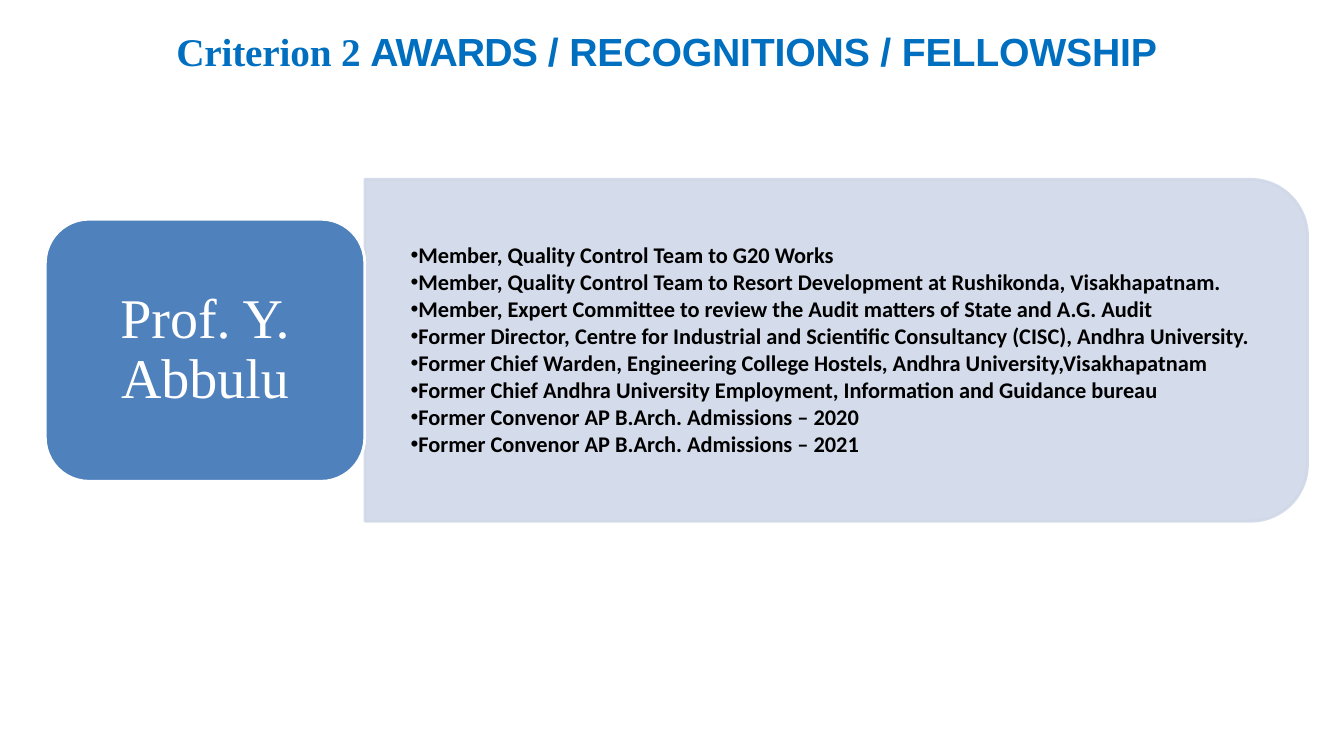
from lxml import etree
from pptx import Presentation
from pptx.dml.color import RGBColor
from pptx.enum.shapes import MSO_SHAPE
from pptx.enum.text import MSO_ANCHOR, PP_ALIGN
from pptx.oxml.ns import qn
from pptx.util import Pt

ROUNDED = MSO_SHAPE.ROUNDED_RECTANGLE
ROUNDED_TOP = MSO_SHAPE.ROUND_2_SAME_RECTANGLE
MIDDLE = MSO_ANCHOR.MIDDLE
CENTER = PP_ALIGN.CENTER

TITLE_PARTS = [
    ("Criterion 2 ", "Times New Roman", -10),
    ("AWARDS ", "Arial", -60),
    ("/ RECOGNITIONS / FELLOWSHIP", "Arial", -10),
]
HONOURS = [
    "Member, Quality Control Team to G20 Works",
    "Member, Quality Control Team to Resort Development at Rushikonda, Visakhapatnam.",
    "Member, Expert Committee to review the Audit matters of State and A.G. Audit",
    "Former Director, Centre for Industrial and Scientific Consultancy (CISC), Andhra University.",
    "Former Chief Warden, Engineering College Hostels, Andhra University,Visakhapatnam",
    "Former Chief Andhra University Employment, Information and Guidance bureau",
    "Former Convenor AP B.Arch. Admissions – 2020",
    "Former Convenor AP B.Arch. Admissions – 2021",
]


def color(value):
    return RGBColor.from_string(value)


class AwardsSlide:
    blue = "006FC0"
    panel = "D0D8E8"
    card = "4F81BD"
    white = "FFFFFF"
    black = "000000"

    def __init__(self, slide):
        self.slide = slide

    def box(self, left, top, width, height):
        return self.slide.shapes.add_textbox(Pt(left), Pt(top), Pt(width), Pt(height))

    def shape(self, kind, left, top, width, height, fill, line):
        shape = self.slide.shapes.add_shape(kind, Pt(left), Pt(top), Pt(width), Pt(height))
        shape.shadow.inherit = False
        shape.fill.solid()
        shape.fill.fore_color.rgb = color(fill)
        shape.line.color.rgb = color(line)
        shape.line.width = Pt(2)
        return shape

    def frame(self, shape, across, down):
        frame = shape.text_frame
        frame.word_wrap = True
        frame.margin_left = frame.margin_right = Pt(across)
        frame.margin_top = frame.margin_bottom = Pt(down)
        return frame

    def style(self, run, font, size, ink, bold=False):
        run.font.name = font
        run.font.size = Pt(size)
        run.font.bold = bold
        run.font.color.rgb = color(ink)

    def title(self, parts, *place):
        frame = self.frame(self.box(*place), 0, 1)
        for text, font, spacing in parts:
            run = frame.paragraphs[0].add_run()
            run.text = text
            self.style(run, font, 28, self.blue, True)
            run.font._element.set("spc", str(spacing))

    def backdrop(self, *place):
        backdrop = self.shape(ROUNDED_TOP, *place, self.panel, self.panel)
        backdrop.rotation = 90
        for tint in backdrop._element.spPr.iter(qn("a:srgbClr")):
            etree.SubElement(tint, qn("a:alpha"), val="90000")

    def honours(self, items, *place):
        frame = self.frame(self.box(*place), 19.2, 9.6)
        frame.vertical_anchor = MIDDLE
        frame.text = "\n".join(items)
        for paragraph in frame.paragraphs:
            properties = paragraph._p.get_or_add_pPr()
            properties.set("marL", str(Pt(13.5)))
            properties.set("indent", "0")
            etree.SubElement(properties, qn("a:buFont"), typeface="Arial")
            etree.SubElement(properties, qn("a:buChar"), char="•")
            paragraph.line_spacing = 0.9
            paragraph.space_after = Pt(2)
            self.style(paragraph.runs[0], "Calibri", 16, self.black, True)

    def name_card(self, name, *place):
        card = self.shape(ROUNDED, *place, self.card, self.white)
        frame = self.frame(card, 12, 6)
        frame.vertical_anchor = MIDDLE
        frame.text = name
        paragraph = frame.paragraphs[0]
        paragraph.alignment = CENTER
        paragraph.line_spacing = 0.9
        self.style(paragraph.runs[0], "Times New Roman", 40, self.white)


def main():
    deck = Presentation()
    deck.slide_width, deck.slide_height = Pt(960), Pt(540)
    awards = AwardsSlide(deck.slides.add_slide(deck.slide_layouts[6]))
    awards.title(TITLE_PARTS, 126, 18.5, 720, 35)
    awards.backdrop(475.2, -86.4, 244.2, 673.2)
    awards.honours(HONOURS, 260.6, 140.4, 661, 220.3)
    awards.name_card("Prof. Y. Abbulu", 32.4, 156.6, 228.2, 187.2)
    deck.save("out.pptx")


if __name__ == "__main__":
    main()
